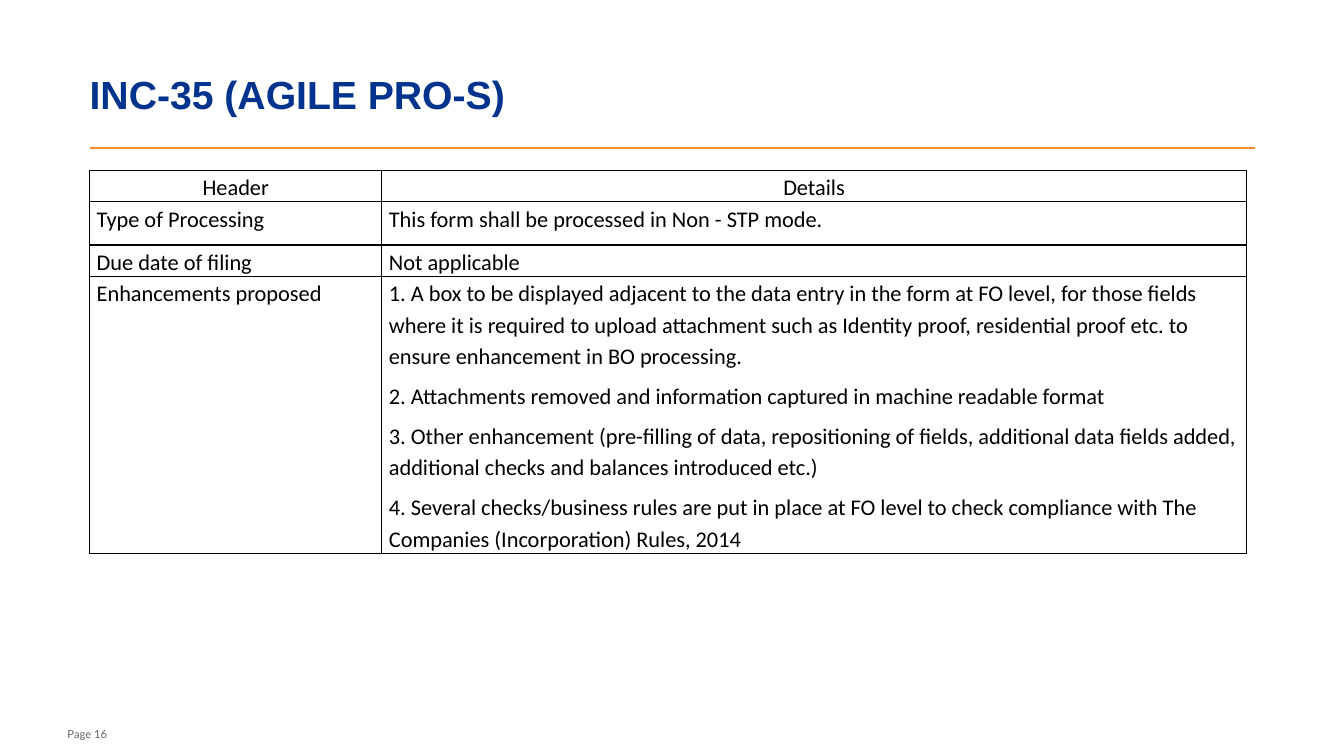
import dataclasses

import lxml.etree
import pptx
import pptx.dml.color
import pptx.enum.shapes
import pptx.enum.text
import pptx.oxml.ns
import pptx.util

Inches = pptx.util.Inches
Align = pptx.enum.text.PP_ALIGN
Anchor = pptx.enum.text.MSO_ANCHOR
qualified = pptx.oxml.ns.qn


@dataclasses.dataclass(frozen=True)
class Theme:
    title: tuple = ("Arial", 28, "00338D", True)
    body: tuple = ("Calibri", 16, "000000", False)
    footer: tuple = ("Lato", 8, "646464", False)
    rule: str = "F68D2E"
    border: str = "000000"
    line_width: int = 1


THEME = Theme()
COLUMN_WIDTHS = (2.9, 8.58)
ROW_HEIGHTS = (0.31, 0.43, 0.31, 2.75)
ROWS = (
    ("Header", ["Details"]),
    ("Type of Processing", ["This form shall be processed in Non - STP mode."]),
    ("Due date of filing", ["Not applicable"]),
    ("Enhancements proposed", [
        "1. A box to be displayed adjacent to the data entry in the form at FO level, "
        "for those fields where it is required to upload attachment such as Identity proof, "
        "residential proof etc. to ensure enhancement in BO processing.",
        "2. Attachments removed and information captured in machine readable format",
        "3. Other enhancement (pre-filling of data, repositioning of fields, additional data "
        "fields added, additional checks and balances introduced etc.)",
        "4. Several checks/business rules are put in place at FO level to check compliance "
        "with The Companies (Incorporation) Rules, 2014",
    ]),
)


def apply(target, values):
    for name, value in values.items():
        setattr(target, name, value)


def rgb(value):
    return pptx.dml.color.RGBColor.from_string(value)


def write(frame, lines, style, **paragraph_format):
    family, size, color, bold = style
    for index, line in enumerate(lines):
        para = frame.add_paragraph() if index else frame.paragraphs[0]
        apply(para, paragraph_format)
        if index:
            para.space_before = pptx.util.Pt(6)
        span = para.add_run()
        span.text = line
        apply(span.font, {"name": family, "size": pptx.util.Pt(size), "bold": bold})
        span.font.color.rgb = rgb(color)


def add_label(page, text, style, anchor, left, top, width, height):
    box = page.shapes.add_textbox(Inches(left), Inches(top), Inches(width), Inches(height))
    apply(box.text_frame, {
        "word_wrap": True, "vertical_anchor": anchor,
        "margin_left": 0, "margin_right": 0, "margin_top": 0, "margin_bottom": 0,
    })
    write(box.text_frame, [text], style)


def add_rule(page, left, right, top):
    rule = page.shapes.add_connector(
        pptx.enum.shapes.MSO_CONNECTOR.STRAIGHT,
        Inches(left), Inches(top), Inches(right), Inches(top))
    rule.line.color.rgb = rgb(THEME.rule)
    rule.line.width = pptx.util.Pt(THEME.line_width)
    lxml.etree.SubElement(rule.element.spPr, qualified("a:effectLst"))


def add_borders(cell):
    properties = cell._tc.get_or_add_tcPr()
    for side in ("a:lnL", "a:lnR", "a:lnT", "a:lnB"):
        edge = lxml.etree.SubElement(
            properties, qualified(side), w=str(pptx.util.Pt(THEME.line_width)))
        fill = lxml.etree.SubElement(edge, qualified("a:solidFill"))
        lxml.etree.SubElement(fill, qualified("a:srgbClr"), val=THEME.border)


def fill_cell(cell, lines, alignment):
    apply(cell, {
        "margin_left": Inches(0.07), "margin_right": Inches(0.07),
        "margin_top": 0, "margin_bottom": 0, "vertical_anchor": Anchor.TOP,
    })
    add_borders(cell)
    cell.fill.background()
    write(cell.text_frame, lines, THEME.body, alignment=alignment, line_spacing=1.15)


def add_details_table(page, left, top):
    table = page.shapes.add_table(
        len(ROWS), len(COLUMN_WIDTHS), Inches(left), Inches(top),
        Inches(sum(COLUMN_WIDTHS)), Inches(sum(ROW_HEIGHTS))).table
    apply(table, {"first_row": False, "horz_banding": False})
    for column, width in zip(table.columns, COLUMN_WIDTHS):
        column.width = Inches(width)
    for index, (heading, details) in enumerate(ROWS):
        table.rows[index].height = Inches(ROW_HEIGHTS[index])
        alignment = Align.LEFT if index else Align.CENTER
        fill_cell(table.cell(index, 0), [heading], alignment)
        fill_cell(table.cell(index, 1), details, alignment)


def main():
    """Build the INC-35 form summary slide."""
    deck = pptx.Presentation()
    apply(deck, {"slide_width": Inches(13.34), "slide_height": Inches(7.5)})
    page = deck.slides.add_slide(deck.slide_layouts[6])
    add_label(page, "Page 16", THEME.footer, Anchor.BOTTOM, 0.67, 7.13, 0.97, 0.22)
    add_rule(page, 0.89, 12.46, 1.47)
    add_label(page, "INC-35 (AGILE PRO-S)", THEME.title, Anchor.MIDDLE, 0.89, 0.4, 11.54, 1.07)
    add_details_table(page, 0.89, 1.69)
    deck.save("out.pptx")


if __name__ == "__main__":
    main()
